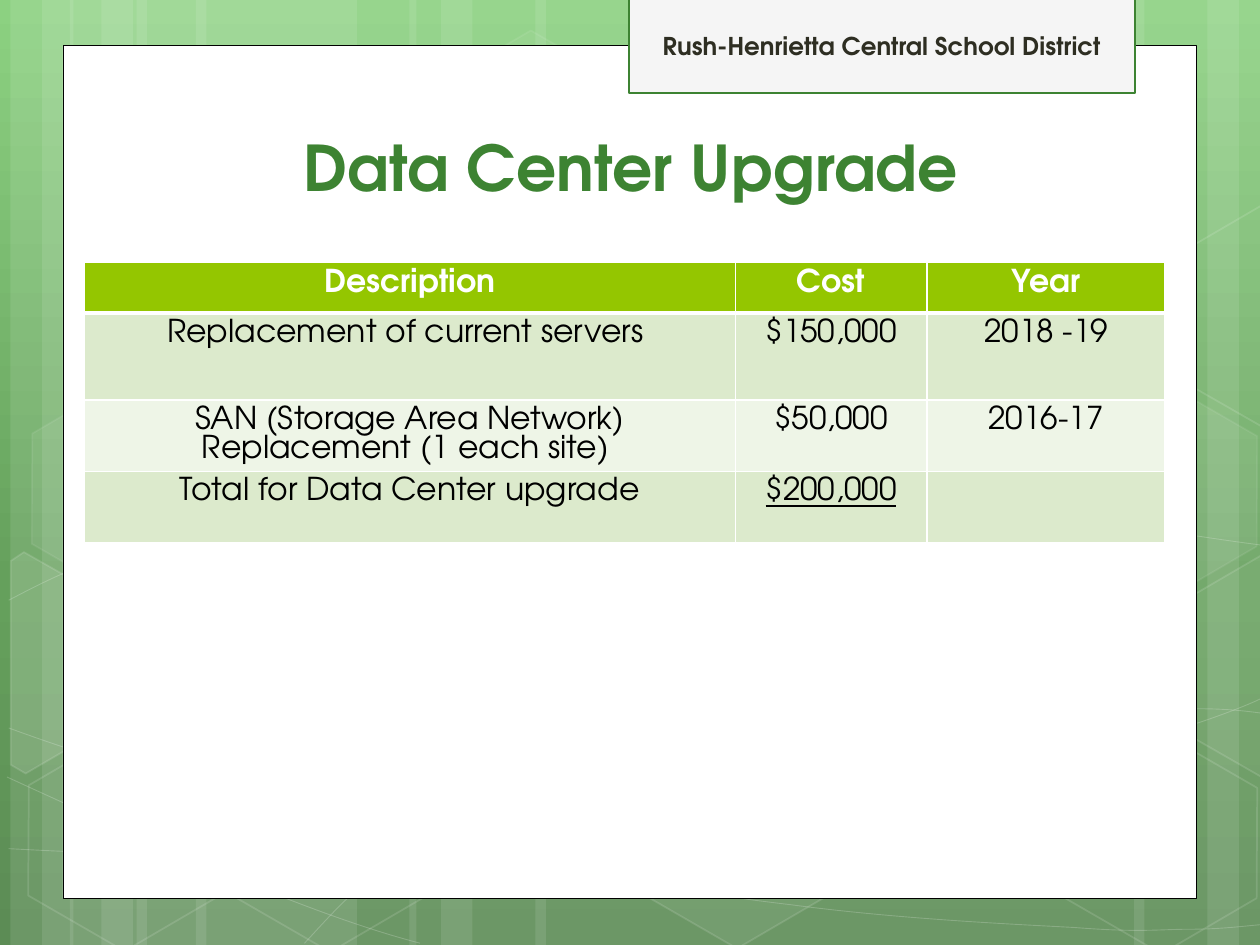
from math import cos, radians, sin

from lxml.etree import SubElement
from pptx import Presentation
from pptx.dml.color import RGBColor
from pptx.enum.shapes import MSO_SHAPE
from pptx.enum.text import MSO_ANCHOR, PP_ALIGN
from pptx.oxml import parse_xml
from pptx.oxml.ns import nsdecls, qn
from pptx.util import Pt

FONT = "TeX Gyre Adventor"
WIDE, HIGH = 720, 540
TURN = 30
COLORS = {
    "white": "FFFFFF", "black": "000000", "green": "3D8332",
    "tab": "F5F5F5", "ink": "2E2E22", "head": "94C600",
    "odd": "DCEACC", "even": "EEF5E7",
}
SKY = [(0, "8CD181"), (62, "65A05C"), (100, "5C8C55")]

# Left and width of each light band
BANDS = [(78, 126), (6, 36), (24, 60), (112, 126), (40, 36), (58, 60),
         (528, 126), (690, 36), (648, 60), (306, 222), (234, 36), (252, 60)]
# Start of each curve, then two handles and an end for each piece
CURVES = [
    [(5, 485), (44, 487), (83, 489), (137, 488), (191, 487), (258, 486),
     (330, 479), (402, 472), (504, 458), (570, 444), (636, 430), (703, 409),
     (725, 397)],
    [(5, 343), (26, 332), (47, 321), (87, 310), (128, 300), (186, 284),
     (250, 279), (314, 274), (392, 273), (471, 279), (550, 284), (682, 307),
     (725, 312)],
    [(4, 444), (91, 484), (178, 523), (240, 539)],
    [(5, 416), (27, 424), (50, 432), (92, 444), (134, 454), (197, 472),
     (257, 485), (317, 497), (392, 510), (452, 517), (512, 525), (576, 528),
     (614, 530), (652, 533), (662, 531), (680, 531), (699, 531), (712, 529),
     (725, 528)],
    [(174, 539), (187, 525), (200, 510), (217, 498), (235, 485), (259, 470),
     (279, 460), (300, 450), (312, 446), (338, 438), (364, 431), (413, 421),
     (438, 416), (464, 411), (467, 411), (490, 410), (512, 408), (547, 405),
     (572, 405), (597, 405), (638, 405), (638, 405), (654, 405), (670, 405),
     (686, 405), (699, 405), (711, 406), (724, 408)],
]
# Left, top, fill alpha and line alpha of each hexagon
HEXES = [(240.5, 26, 4, 8), (358, 424, 6, 12), (8, 425.5, 0, 12),
         (10, 224.5, 7, 8), (125.5, 426, 0, 12), (600.5, 427, 0, 12),
         (600.5, 226, 7, 8)]
# Hexagons cut by the slide edge: middle, points and fill alpha
CUTS = [
    ((26, 385), [(6, 320.5), (13.5, 315.5), (69, 347), (68.5, 410.5),
                 (14.5, 442), (6, 437), (6, 320.5)], 10),
    ((709, 374.5), [(666.5, 349), (720.5, 317.5), (726.5, 321), (726.5, 441.5),
                    (721.5, 444), (666.5, 412.5)], 4),
    ((709, 173.5), [(666.5, 149), (720.5, 117.5), (727, 121), (726.5, 241),
                    (721.5, 244), (666.5, 212.5)], 0),
]

COLS = [372, 109.5, 136.2]
ROWS = [28.8, 49.7, 40.5, 41]
CELLS = [
    ["Description", "Cost", "Year"],
    ["Replacement of current servers ", "$150,000", "2018 -19"],
    ["SAN (Storage Area Network) Replacement (1 each site) ", "$50,000",
     "2016-17"],
    ["Total for Data Center upgrade", "$200,000", ""],
]


def rgb(name):
    return RGBColor.from_string(COLORS[name])


def fade(fill, alpha):
    """Fill with white at the given percentage, or not at all."""
    if not alpha:
        fill.background()
        return
    fill.solid()
    fill.fore_color.rgb = rgb("white")
    tint = fill._xPr.find(qn("a:solidFill"))[0]
    SubElement(tint, qn("a:alpha")).set("val", str(alpha * 1000))


def veil(shape, fill, line=0, width=1):
    """Give a shape a faint white fill and line."""
    shape.shadow.inherit = False
    fade(shape.fill, fill)
    fade(shape.line.fill, line)
    if line:
        shape.line.width = Pt(width)


def block(slide, box, kind=MSO_SHAPE.RECTANGLE):
    return slide.shapes.add_shape(kind, *[Pt(v) for v in box])


def trace(slide, dots, close):
    pen = slide.shapes.build_freeform(Pt(dots[0][0]), Pt(dots[0][1]))
    pen.add_line_segments([(Pt(x), Pt(y)) for x, y in dots[1:]], close=close)
    return pen.convert_to_shape()


def curve(slide, dots):
    """Trace the points, then join each three into a Bezier piece."""
    shape = trace(slide, dots, False)
    lines = list(shape._element.iter(qn("a:lnTo")))
    for k in range(0, len(lines), 3):
        piece = SubElement(lines[k].getparent(), qn("a:cubicBezTo"))
        for line in lines[k:k + 3]:
            piece.append(line[0])
            line.getparent().remove(line)
    return shape


def swing(dot, mid):
    """Turn a point back about the middle, ahead of the shape's rotation."""
    x, y = dot[0] - mid[0], dot[1] - mid[1]
    c, s = cos(radians(TURN)), sin(radians(TURN))
    return mid[0] + x * c + y * s, mid[1] - x * s + y * c


def backdrop(slide, box):
    left, top, _, high = box
    stops = "".join(
        f'<a:gs pos="{pos * 1000}"><a:srgbClr val="{tone}"/></a:gs>'
        for pos, tone in SKY)
    slide.background.fill.solid()
    props = slide._element.cSld.find(qn("p:bg"))[0]
    props.replace(props[0], parse_xml(
        f'<a:gradFill {nsdecls("a")} rotWithShape="1"><a:gsLst>{stops}'
        '</a:gsLst><a:lin ang="5400000" scaled="0"/></a:gradFill>'))
    for x, wide in BANDS:
        veil(block(slide, (left + x, top, wide, high)), 10)
    for dots in CURVES:
        veil(curve(slide, [(left + x, top + y) for x, y in dots]), 0, 20, 0.5)
    for x, y, fill, line in HEXES:
        hexa = block(slide, (left + x, top + y, 126, 109.5),
                     MSO_SHAPE.HEXAGON)
        hexa.adjustments[0] = 0.285
        hexa.rotation = TURN
        veil(hexa, fill, line)
    for mid, dots, fill in CUTS:
        turned = [swing(dot, mid) for dot in dots]
        part = trace(slide, [(left + x, top + y) for x, y in turned], True)
        part.rotation = TURN
        veil(part, fill, 12)


def write(para, text, **form):
    para.alignment = PP_ALIGN.CENTER
    run = para.add_run()
    run.text = text
    color = form.pop("color")
    for key, val in {"name": FONT, **form}.items():
        setattr(run.font, key, val)
    run.font.color.rgb = rgb(color)


def panel(slide, box, fill, line, width):
    shape = block(slide, box)
    shape.shadow.inherit = False
    shape.fill.solid()
    shape.fill.fore_color.rgb = rgb(fill)
    shape.line.color.rgb = rgb(line)
    shape.line.width = Pt(width)
    return shape


def banner(slide, box):
    frame = panel(slide, box, "tab", "green", 1.25).text_frame
    frame.vertical_anchor = MSO_ANCHOR.MIDDLE
    write(frame.paragraphs[0], "Rush-Henrietta Central School District",
          size=Pt(14), bold=True, color="ink")


def title(slide, box):
    frame = slide.shapes.add_textbox(*[Pt(v) for v in box]).text_frame
    frame.word_wrap = True
    frame.vertical_anchor = MSO_ANCHOR.BOTTOM
    write(frame.paragraphs[0], "Data Center Upgrade",
          size=Pt(36), bold=True, color="green")


def edge(cell, row):
    """Draw white cell borders, thick below the header."""
    props = cell._tc.get_or_add_tcPr()
    for spot, side in enumerate("LRTB"):
        width = Pt(3 if (row, side) in {(0, "B"), (1, "T")} else 1)
        props.insert(spot, parse_xml(
            f'<a:ln{side} {nsdecls("a")} w="{width}"><a:solidFill>'
            f'<a:srgbClr val="{COLORS["white"]}"/></a:solidFill></a:ln{side}>'))


def costs(slide, box):
    grid = slide.shapes.add_table(len(ROWS), len(COLS),
                                  *[Pt(v) for v in box]).table
    for col, wide in zip(grid.columns, COLS):
        col.width = Pt(wide)
    for r, (row, high) in enumerate(zip(grid.rows, ROWS)):
        row.height = Pt(high)
        tone = "head" if r == 0 else "odd" if r % 2 else "even"
        for cell, text in zip(row.cells, CELLS[r]):
            cell.fill.solid()
            cell.fill.fore_color.rgb = rgb(tone)
            cell.margin_left = cell.margin_right = Pt(12)
            edge(cell, r)
            para = cell.text_frame.paragraphs[0]
            para.line_spacing = Pt(16.8)
            if text:
                write(para, text, size=Pt(18), bold=r == 0,
                      underline=text == "$200,000",
                      color="black" if r else "white")


def main():
    deck = Presentation()
    deck.slide_width, deck.slide_height = Pt(WIDE), Pt(HIGH)
    slide = deck.slides.add_slide(deck.slide_layouts[6])
    backdrop(slide, (0, 0, WIDE, HIGH))
    panel(slide, (36, 26, 648, 487.2), "white", "black", 0.5)
    banner(slide, (359.3, -1.5, 289.3, 54.7))
    title(slide, (84, 60, 553, 60))
    costs(slide, (48.2, 150, sum(COLS), sum(ROWS)))
    deck.save("out.pptx")


if __name__ == "__main__":
    main()
